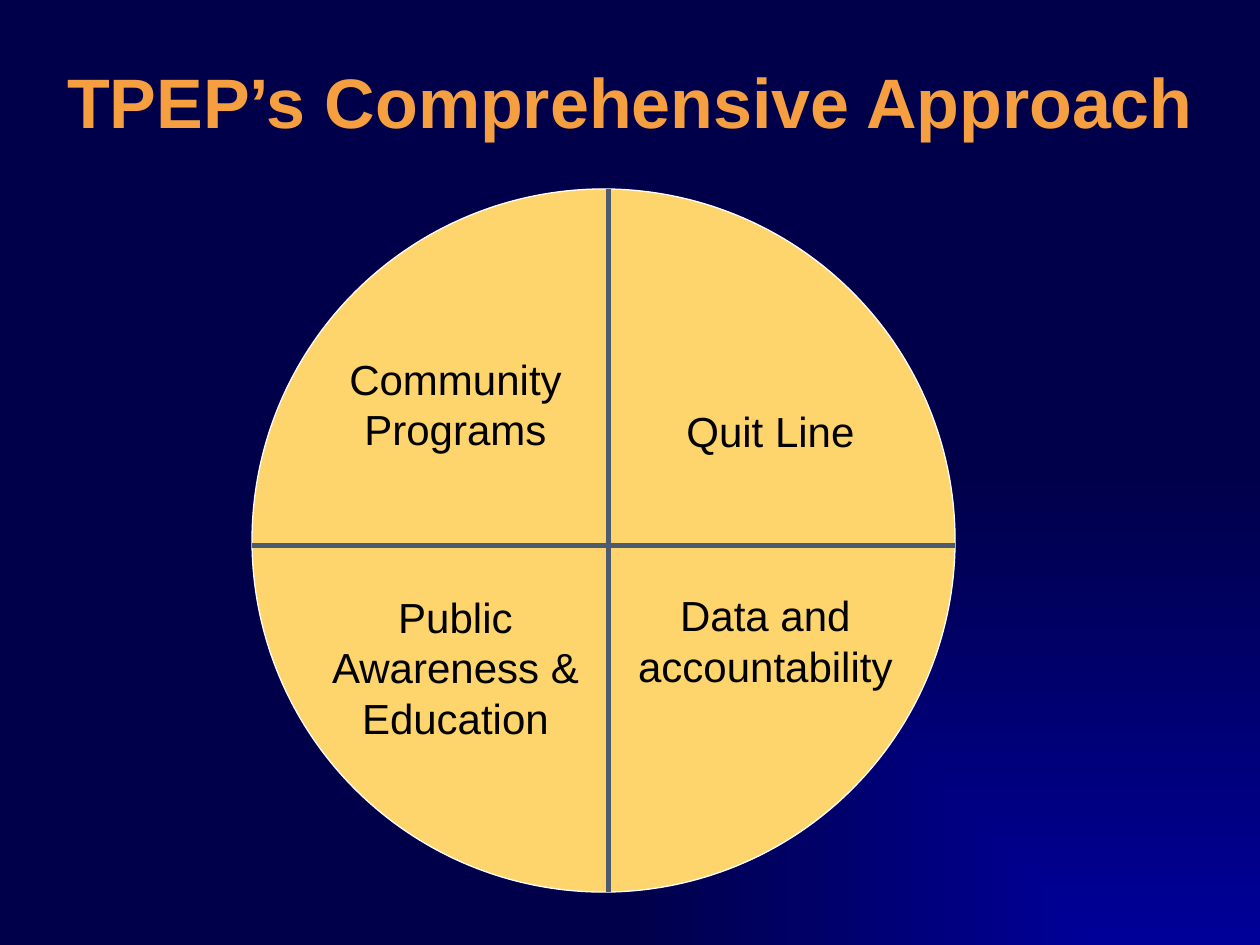
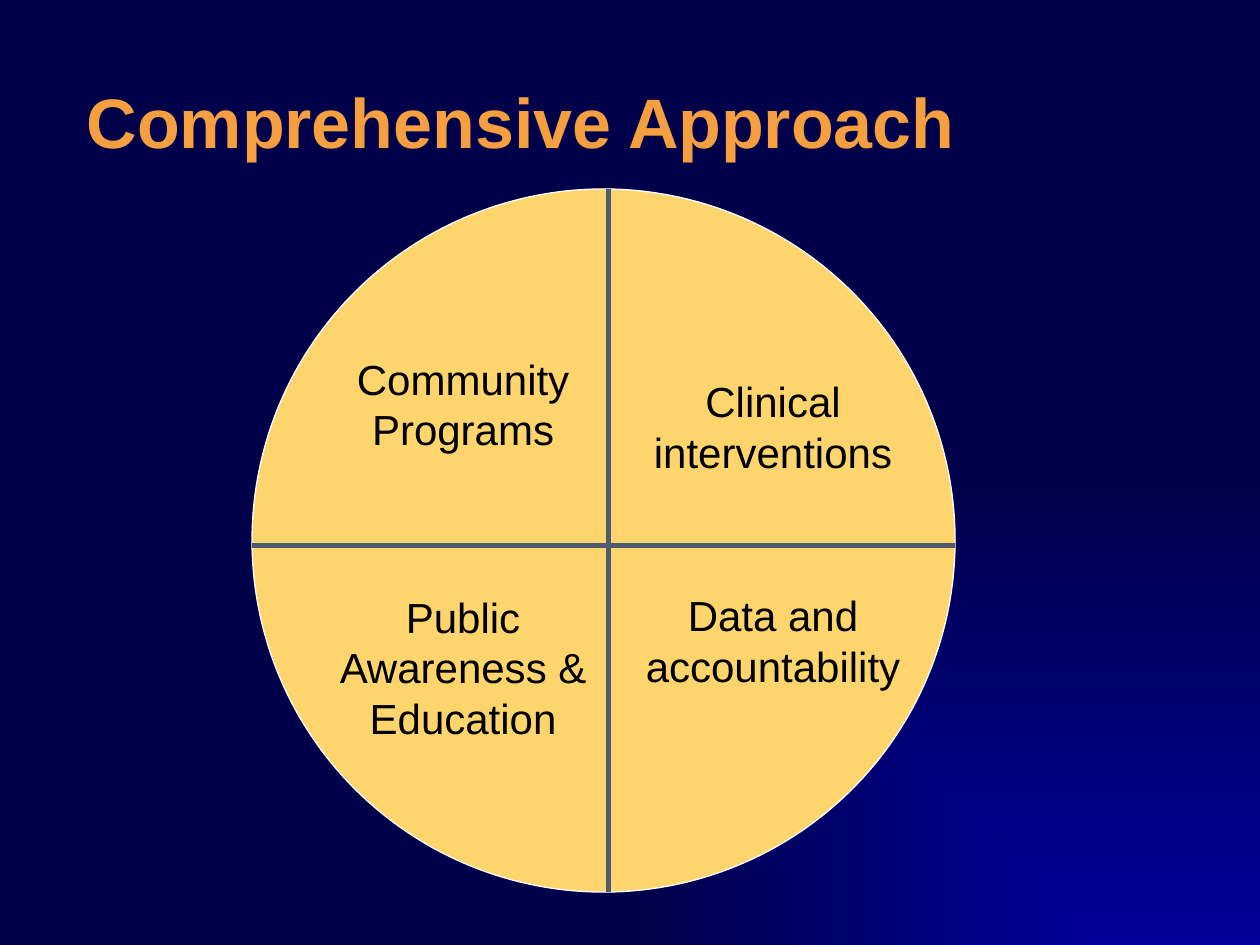
from lxml.etree import SubElement
from pptx import Presentation
from pptx.dml.color import RGBColor
from pptx.enum.shapes import MSO_CONNECTOR, MSO_SHAPE
from pptx.enum.text import MSO_ANCHOR, MSO_AUTO_SIZE, PP_ALIGN
from pptx.oxml.ns import qn
from pptx.util import Inches, Pt

COLORS = {
    "glow": "000099",
    "navy": "00004A",
    "title": "F59F41",
    "wheel": "FED46C",
    "rim": "FFFFFF",
    "spoke": "4E5B6F",
    "label": "000000",
}
FONT = "Arial"
COLS, ROWS = 40, 30

# Wheel geometry in grid units
WHEEL_X, WHEEL_Y, WHEEL_SIZE = 8, 6, 22.32
HUB_X, HUB_Y = 19.32, 17.32


def rgb(name):
    return RGBColor.from_string(COLORS[name])


class Deck:
    def __init__(self):
        self.prs = Presentation()
        self.prs.slide_width, self.prs.slide_height = Inches(10), Inches(7.5)
        self.s = None

    def x(self, cols):
        return round(self.prs.slide_width * cols / COLS)

    def y(self, rows):
        return round(self.prs.slide_height * rows / ROWS)

    def box(self, left, top, width, height):
        return self.x(left), self.y(top), self.x(width), self.y(height)

    def slide(self):
        self.s = self.prs.slides.add_slide(self.prs.slide_layouts[6])
        fill = self.s.background.fill
        fill.gradient()
        for stop, name in zip(fill.gradient_stops, ("glow", "navy")):
            stop.color.rgb = rgb(name)
        # Let the glow spread from the bottom right corner
        grad = self.s.element.find(".//" + qn("a:gradFill"))
        grad.remove(grad.find(qn("a:lin")))
        spread = SubElement(grad, qn("a:path"), {"path": "rect"})
        SubElement(spread, qn("a:fillToRect"), {"l": "100000", "t": "100000"})

    def text(self, words, place, size, color, align, bold=False):
        tf = self.s.shapes.add_textbox(*self.box(*place)).text_frame
        tf.word_wrap = True
        p = tf.paragraphs[0]
        p.alignment = align
        r = p.add_run()
        r.text = words
        r.font.name, r.font.size, r.font.bold = FONT, Pt(size), bold
        r.font.color.rgb = rgb(color)
        return tf

    def title(self, words, left, top, width, align):
        tf = self.text(words, (left, top, width, 5), 40, "title", align, bold=True)
        tf.vertical_anchor = MSO_ANCHOR.MIDDLE

    def label(self, words, left, top, width, lines):
        place = (left, top, width, 0.4 + 1.61 * lines)
        tf = self.text(words, place, 24, "label", PP_ALIGN.CENTER)
        tf.paragraphs[0].line_spacing = Pt(29)
        tf.auto_size = MSO_AUTO_SIZE.SHAPE_TO_FIT_TEXT

    def spoke(self, x1, y1, x2, y2):
        line = self.s.shapes.add_connector(
            MSO_CONNECTOR.STRAIGHT, self.x(x1), self.y(y1), self.x(x2), self.y(y2))
        line.line.color.rgb = rgb("spoke")
        line.line.width = Pt(3)
        SubElement(line.element.spPr, qn("a:effectLst"))

    def wheel(self):
        disc = self.s.shapes.add_shape(
            MSO_SHAPE.OVAL, *self.box(WHEEL_X, WHEEL_Y, WHEEL_SIZE, WHEEL_SIZE))
        disc.shadow.inherit = False
        disc.fill.solid()
        disc.fill.fore_color.rgb = rgb("wheel")
        disc.line.color.rgb = rgb("rim")
        disc.line.width = Pt(0.75)
        self.spoke(HUB_X, WHEEL_Y, HUB_X, WHEEL_Y + WHEEL_SIZE)
        self.spoke(WHEEL_X + WHEEL_SIZE, HUB_Y, WHEEL_X, HUB_Y)

    def approach(self, title, label_width, upper_right):
        """Build a slide with a title and a four-part wheel."""
        self.slide()
        self.title(*title)
        self.wheel()
        labels = [
            ("Community Programs", 10, 11, 2),
            upper_right,
            ("Public Awareness & Education", 10, 18.56, 3),
            ("Data and accountability", 19.84, 18.52, 2),
        ]
        for words, left, top, lines in labels:
            self.label(words, left, top, label_width, lines)


def main():
    deck = Deck()
    # Slide 1: the programme's approach
    deck.approach(("TPEP’s Comprehensive Approach", 1, 0.68, 38, PP_ALIGN.CENTER),
                  8.92, ("Quit Line", 20, 12.68, 1))
    # Slide 2: the general approach
    deck.approach(("Comprehensive Approach", 2.36, 1.32, 37.6, PP_ALIGN.LEFT),
                  9.4, ("Clinical interventions", 19.84, 11.72, 2))
    deck.prs.save("out.pptx")


if __name__ == "__main__":
    main()
